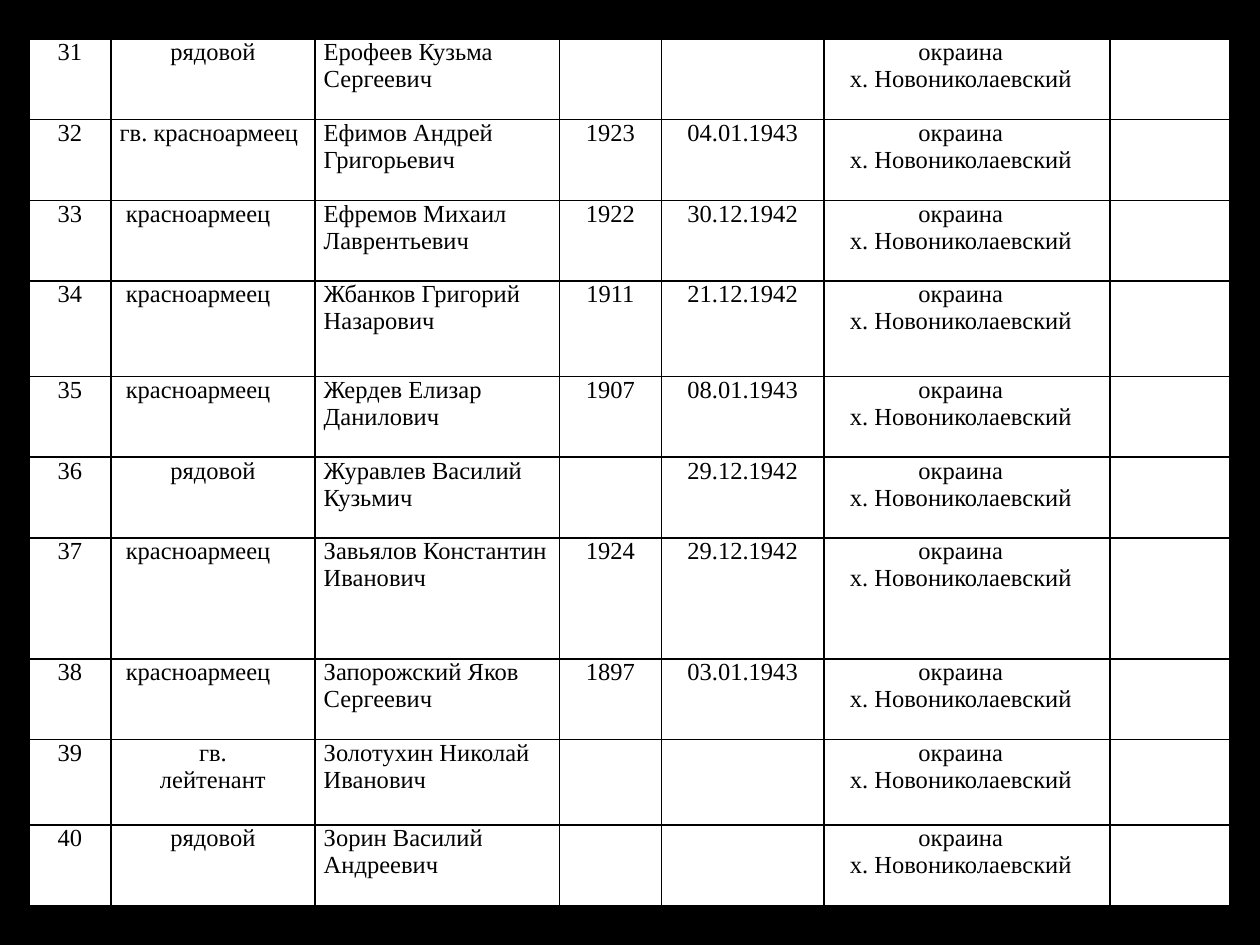
import pptx
import pptx.dml.color
import pptx.enum.text
import pptx.oxml
import pptx.oxml.ns
import pptx.util

COLORS = {"background": "000000", "cell": "FFFFFF", "text": "000000", "border": "000000"}
FONT = "Times New Roman"
LEFT = pptx.enum.text.PP_ALIGN.LEFT
CENTER = pptx.enum.text.PP_ALIGN.CENTER

# Relative widths and heights of the grid
COLUMN_SHARES = [0.65, 1.62, 1.94, 0.81, 1.29, 2.27, 0.95]
ROW_SHARES = [0.64, 0.64, 0.64, 0.76, 0.64, 0.64, 0.96, 0.64, 0.68, 0.64]

FIRST_NUMBER = 31
BURIAL_PLACE = ["окраина", "х. Новониколаевский"]
# Rank, name, year of birth, date of death
SOLDIERS = [
    ("рядовой", "Ерофеев Кузьма Сергеевич", "", ""),
    ("гв. красноармеец", "Ефимов Андрей Григорьевич", "1923", "04.01.1943"),
    ("красноармеец", "Ефремов Михаил Лаврентьевич", "1922", "30.12.1942"),
    ("красноармеец", "Жбанков Григорий Назарович", "1911", "21.12.1942"),
    ("красноармеец", "Жердев Елизар Данилович", "1907", "08.01.1943"),
    ("рядовой", "Журавлев Василий Кузьмич", "", "29.12.1942"),
    ("красноармеец", "Завьялов Константин Иванович", "1924", "29.12.1942"),
    ("красноармеец", "Запорожский Яков Сергеевич", "1897", "03.01.1943"),
    ("гв.\nлейтенант", "Золотухин Николай Иванович", "", ""),
    ("рядовой", "Зорин Василий Андреевич", "", ""),
]


def rgb(name):
    return pptx.dml.color.RGBColor.from_string(COLORS[name])


def write(paragraph, text, align=LEFT, size=14, left=0, right=0):
    """Put text in a paragraph; left and right are margins in points."""
    properties = paragraph._p.get_or_add_pPr()
    for side, margin in (("marL", left), ("marR", right)):
        if margin:
            properties.set(side, str(pptx.util.Pt(margin)))
    paragraph.alignment = align
    run = paragraph.add_run()
    run.text = text
    run.font.name = FONT
    run.font.size = pptx.util.Pt(size)
    run.font.color.rgb = rgb("text")


def style_cell(cell):
    """Give a cell its borders, white fill and narrow margins."""
    properties = cell._tc.get_or_add_tcPr()
    for side in ("lnL", "lnR", "lnT", "lnB"):
        properties.append(pptx.oxml.parse_xml(
            f'<a:{side} {pptx.oxml.ns.nsdecls("a")} w="{pptx.util.Pt(1)}"><a:solidFill>'
            f'<a:srgbClr val="{COLORS["border"]}"/></a:solidFill></a:{side}>'))
    cell.fill.solid()
    cell.fill.fore_color.rgb = rgb("cell")
    cell.margin_left = cell.margin_right = pptx.util.Inches(0.07)
    cell.margin_top = cell.margin_bottom = 0


def fill_cell(cell, lines, formats):
    for index, (text, options) in enumerate(zip(lines, formats)):
        frame = cell.text_frame
        paragraph = frame.add_paragraph() if index else frame.paragraphs[0]
        write(paragraph, text, **options)


def rank_format(rank):
    if rank == "красноармеец":
        return {"left": 3.5}
    return {} if rank.endswith("красноармеец") else {"align": CENTER}


def add_roll(slide, left, top, width, height):
    """Place the roll of soldiers in the given box."""
    roll = slide.shapes.add_table(
        len(ROW_SHARES), len(COLUMN_SHARES), left, top, width, height).table
    roll.first_row = roll.horz_banding = False
    for column, share in zip(roll.columns, COLUMN_SHARES):
        column.width = int(width * share / sum(COLUMN_SHARES))
    for row, share in zip(roll.rows, ROW_SHARES):
        row.height = int(height * share / sum(ROW_SHARES))
    for cell in roll.iter_cells():
        style_cell(cell)

    centered = {"align": CENTER}
    for index, (rank, name, born, died) in enumerate(SOLDIERS):
        entries = [
            ([str(FIRST_NUMBER + index)], [centered]),
            (rank.split("\n"), [rank_format(rank)] * 2),
            ([name], [{}]),
            ([born], [centered]),
            ([died], [centered]),
            (BURIAL_PLACE, [{"align": CENTER, "right": 7}, centered]),
        ]
        for column, (lines, formats) in enumerate(entries):
            if lines[0]:
                fill_cell(roll.cell(index, column), lines, formats)


def main():
    deck = pptx.Presentation()
    deck.slide_width = pptx.util.Inches(10)
    deck.slide_height = pptx.util.Inches(7.5)
    slide = deck.slides.add_slide(deck.slide_layouts[6])
    slide.background.fill.solid()
    slide.background.fill.fore_color.rgb = rgb("background")
    add_roll(slide, pptx.util.Inches(0.23), pptx.util.Inches(0.31),
             pptx.util.Inches(9.53), pptx.util.Inches(6.88))
    deck.save("out.pptx")


if __name__ == "__main__":
    main()
